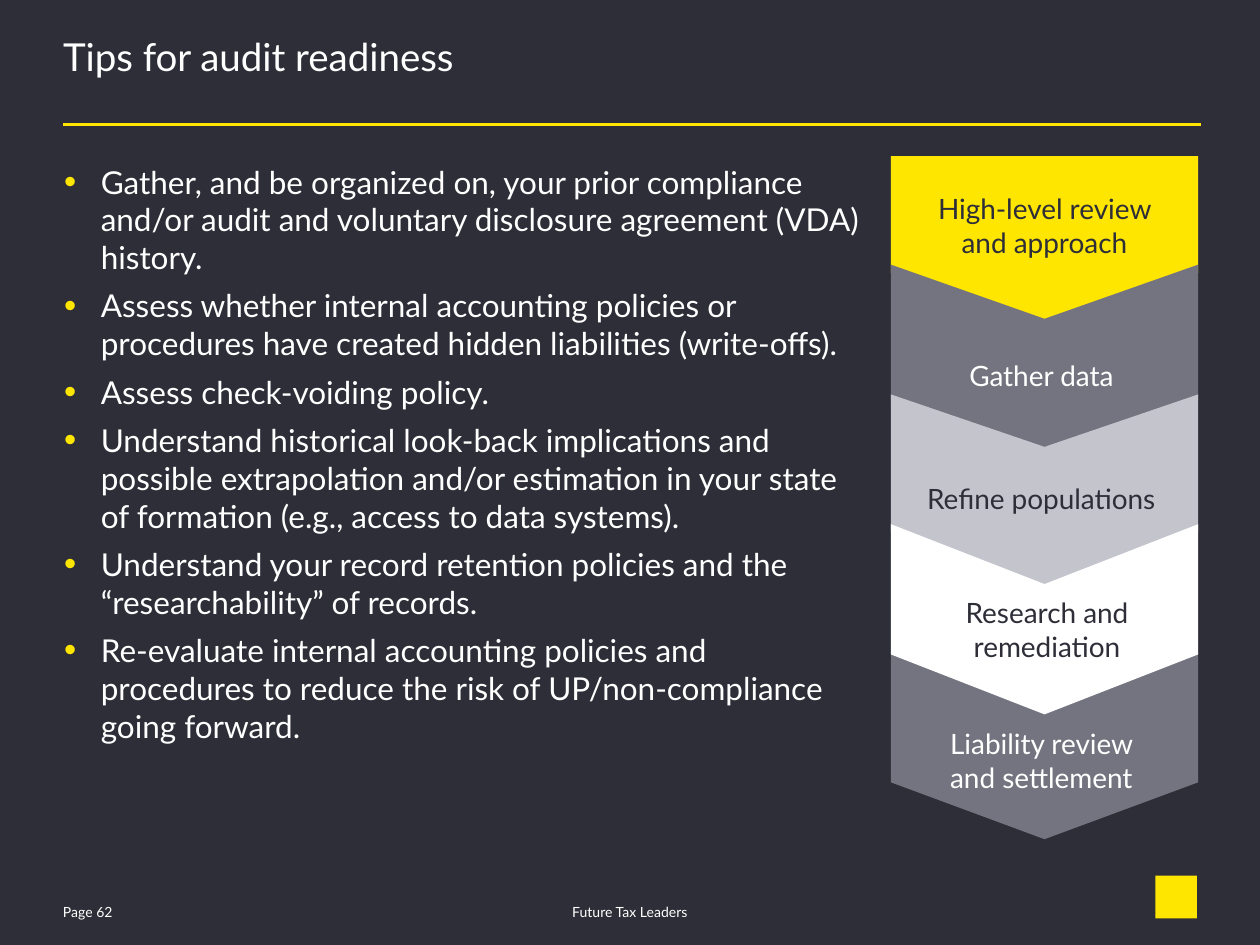
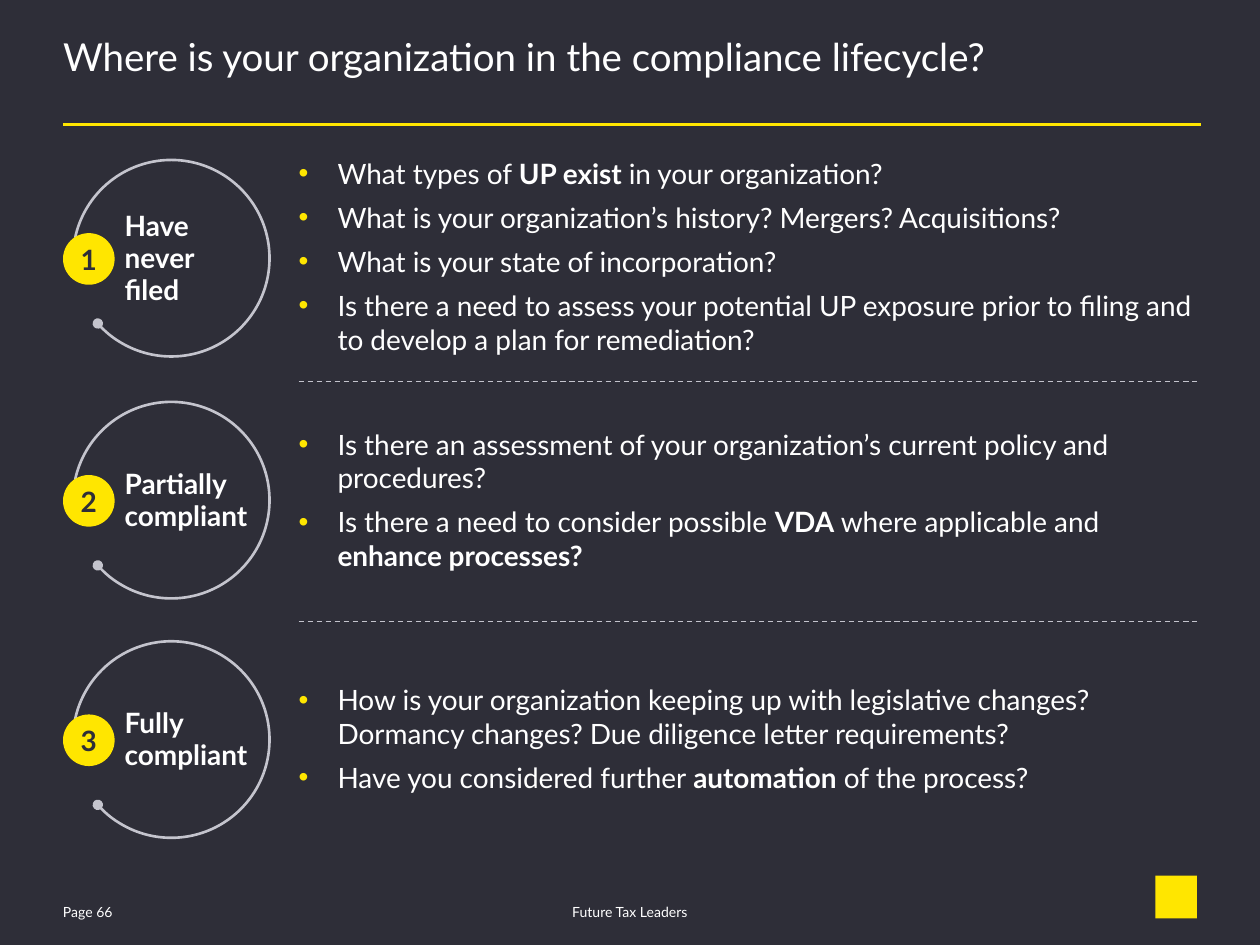
from dataclasses import dataclass
from typing import Optional

from lxml import etree
from pptx import Presentation
from pptx.dml.color import RGBColor
from pptx.enum.dml import MSO_LINE
from pptx.enum.shapes import MSO_CONNECTOR, MSO_SHAPE
from pptx.enum.text import MSO_ANCHOR, MSO_AUTO_SIZE, PP_ALIGN
from pptx.oxml.ns import qn
from pptx.util import Emu, Pt

EMU_PER_PX = 9144
FONT = "Lato"
COLORS = {
    "ink": "2E2E38",
    "yellow": "FFE600",
    "white": "FFFFFF",
    "gray": "747480",
    "silver": "C4C4CD",
}
LEFT, CENTER = PP_ALIGN.LEFT, PP_ALIGN.CENTER
TOP, MIDDLE = MSO_ANCHOR.TOP, MSO_ANCHOR.MIDDLE
NO_FIT = MSO_AUTO_SIZE.NONE
STRAIGHT = MSO_CONNECTOR.STRAIGHT
DASH = MSO_LINE.DASH
CHEVRON, PENTAGON = MSO_SHAPE.CHEVRON, MSO_SHAPE.PENTAGON
OVAL, ARC, RECTANGLE = MSO_SHAPE.OVAL, MSO_SHAPE.ARC, MSO_SHAPE.RECTANGLE

TITLE_ONLY, TITLE_AND_BODY = 5, 1
ARROW_LEFT, ARROW_WIDTH = 707, 244
LIST_LEFT, LIST_WIDTH = 237, 713
ARC_SIZE, BADGE_SIZE = 156, 41
ARC_START, ARC_END = 115.154, 83.031


@dataclass(frozen=True)
class Area:
    left: float
    top: float
    width: float
    height: float

    def emu(self) -> tuple[Emu, Emu, Emu, Emu]:
        return px(self.left), px(self.top), px(self.width), px(self.height)


@dataclass(frozen=True)
class TextStyle:
    size: int
    color: str = "white"
    bold: bool = False
    align: PP_ALIGN = LEFT
    anchor: MSO_ANCHOR = TOP
    top_inset: int = 0
    line_spacing: float = 1.0
    space_after: int = 0
    indent: int = 0
    bullet_percent: int = 100


@dataclass(frozen=True)
class Step:
    label: str
    label_area: Area
    top: int
    length: int
    bend: float
    fill: str
    ink: str


@dataclass(frozen=True)
class Stage:
    label: str
    top: int
    list_top: int
    list_height: int
    questions: tuple[str, ...]


TITLE = TextStyle(22, line_spacing=0.85)
FOOTER = TextStyle(8, top_inset=4)
FOOTER_CENTER = TextStyle(8, top_inset=4, align=CENTER)
TIP = TextStyle(18, space_after=6, indent=29, bullet_percent=110)
QUESTION = TextStyle(16, space_after=6, indent=31)
STAGE_LABEL = TextStyle(16, bold=True, anchor=MIDDLE, line_spacing=0.95, space_after=6)
BADGE = TextStyle(16, color="ink", bold=True, align=CENTER, anchor=MIDDLE)

TIPS = (
    "Gather, and be organized on, your prior compliance and/or audit and voluntary disclosure agreement (VDA) history.",
    "Assess whether internal accounting policies or procedures have created hidden liabilities (write-offs).",
    "Assess check-voiding policy.",
    "Understand historical look-back implications and possible extrapolation and/or estimation in your state of formation (e.g., access to data systems).",
    "Understand your record retention policies and the “researchability” of records.",
    "Re-evaluate internal accounting policies and procedures to reduce the risk of UP/non-compliance going forward.",
)
STEPS = (
    Step("High-level review and approach", Area(727, 149, 204, 57), 124, 133, 0.303, "yellow", "ink"),
    Step("Gather data", Area(739, 280, 175, 32), 210, 151, 0.285, "gray", "white"),
    Step("Refine populations", Area(705, 379, 243, 30), 313, 151, 0.276, "silver", "ink"),
    Step("Research and remediation", Area(730, 468, 202, 60), 416, 151, 0.315, "white", "ink"),
    Step("Liability review and settlement", Area(739, 572, 175, 60), 517, 149, 0.303, "gray", "white"),
)
STAGES = (
    Stage("Have\nnever\nfiled", 127, 124, 161, (
        "What types of *UP exist *in your organization?",
        "What is your organization’s history? Mergers? Acquisitions?",
        "What is your state of incorporation?",
        "Is there a need to assess your potential UP exposure prior to filing and to develop a plan for remediation?",
    )),
    Stage("Partially compliant", 319, 339, 128, (
        "Is there an assessment of your organization’s current policy and procedures?",
        "Is there a need to consider possible *VDA* where applicable and *enhance processes?*",
    )),
    Stage("Fully\ncompliant", 509, 542, 90, (
        "How is your organization keeping up with legislative changes? Dormancy changes? Due diligence letter requirements?",
        "Have you considered further *automation* of the process?",
    )),
)
DIVIDER_TOPS = (303, 493)


def px(value: float) -> Emu:
    return Emu(round(value * EMU_PER_PX))


def rgb(name: str) -> RGBColor:
    return RGBColor.from_string(COLORS[name])


def add_bullet(para, style: TextStyle) -> None:
    props = para._p.get_or_add_pPr()
    props.set("marL", str(px(style.indent)))
    props.set("indent", str(-px(style.indent)))
    color = etree.SubElement(props, qn("a:buClr"))
    etree.SubElement(color, qn("a:srgbClr")).set("val", COLORS["yellow"])
    etree.SubElement(props, qn("a:buSzPct")).set("val", str(style.bullet_percent * 1000))
    etree.SubElement(props, qn("a:buFont")).set("typeface", "Arial")
    etree.SubElement(props, qn("a:buChar")).set("char", "•")


def write_para(para, text: str, style: TextStyle) -> None:
    para.alignment = style.align
    para.line_spacing = style.line_spacing
    para.space_before = Pt(0)
    para.space_after = Pt(style.space_after)
    if style.indent:
        add_bullet(para, style)
    if "*" in text:
        for index, part in enumerate(text.split("*")):
            if part:
                span = para.add_run()
                span.text = part
                span.font.bold = index % 2 == 1
    else:
        para.text = text
    for span in para.runs:
        span.font.name = FONT
        span.font.size = Pt(style.size)
        span.font.color.rgb = rgb(style.color)
        if style.bold:
            span.font.bold = True


def write(box, style: TextStyle, *texts: str) -> None:
    frame = box.text_frame
    frame.auto_size = NO_FIT
    frame.word_wrap = True
    frame.vertical_anchor = style.anchor
    frame.margin_left = frame.margin_right = frame.margin_bottom = 0
    frame.margin_top = px(style.top_inset)
    for index, text in enumerate(texts):
        para = frame.add_paragraph() if index else frame.paragraphs[0]
        write_para(para, text, style)


def add_text(shapes, area: Area, style: TextStyle, *texts: str) -> None:
    write(shapes.add_textbox(*area.emu()), style, *texts)


def fill_placeholder(box, area: Area, style: TextStyle, *texts: str) -> None:
    box.left, box.top, box.width, box.height = area.emu()
    write(box, style, *texts)


def add_solid(shapes, kind: MSO_SHAPE, area: Area, fill: str):
    shape = shapes.add_shape(kind, *area.emu())
    shape.shadow.inherit = False
    shape.fill.solid()
    shape.fill.fore_color.rgb = rgb(fill)
    shape.line.fill.background()
    return shape


def add_rule(page, left: int, right: int, top: int, color: str, weight: float,
             dash: Optional[MSO_LINE] = None) -> None:
    rule = page.shapes.add_connector(STRAIGHT, px(left), px(top), px(right), px(top))
    rule.line.color.rgb = rgb(color)
    rule.line.width = Pt(weight)
    if dash is not None:
        rule.line.dash_style = dash
    etree.SubElement(rule._element.spPr, qn("a:effectLst"))


def add_page(deck, layout: int, title: str, number: int):
    page = deck.slides.add_slide(deck.slide_layouts[layout])
    add_text(page.shapes, Area(50, 713, 73, 20), FOOTER, f"Page {number}")
    add_text(page.shapes, Area(308, 713, 384, 20), FOOTER_CENTER, "Future Tax Leaders")
    add_solid(page.shapes, RECTANGLE, Area(917, 695, 33, 34), "yellow")
    add_rule(page, 50, 953, 99, "yellow", 1.5)
    fill_placeholder(page.shapes.title, Area(50, 32, 900, 65), TITLE, title)
    return page


def add_step_arrow(page, step: Step, kind: MSO_SHAPE) -> None:
    shift = (ARROW_WIDTH - step.length) / 2
    area = Area(ARROW_LEFT + shift, step.top - shift, step.length, ARROW_WIDTH)
    arrow = add_solid(page.shapes, kind, area, step.fill)
    arrow.rotation = 90
    arrow.adjustments[0] = step.bend


def add_stage(page, number: int, stage: Stage) -> None:
    shapes = page.shapes.add_group_shape().shapes
    add_text(shapes, Area(99, stage.top + 54, 110, 49), STAGE_LABEL, stage.label)
    ring = shapes.add_shape(ARC, *Area(58, stage.top, ARC_SIZE, ARC_SIZE).emu())
    ring.shadow.inherit = False
    ring.fill.background()
    ring.adjustments[0] = ARC_START
    ring.adjustments[1] = ARC_END
    ring.line.color.rgb = rgb("silver")
    ring.line.width = Pt(1.5)
    etree.SubElement(ring.line._get_or_add_ln(), qn("a:tailEnd")).set("type", "oval")
    badge_area = Area(50, stage.top + 58, BADGE_SIZE, BADGE_SIZE)
    write(add_solid(shapes, OVAL, badge_area, "yellow"), BADGE, str(number))
    list_area = Area(LIST_LEFT, stage.list_top, LIST_WIDTH, stage.list_height)
    add_text(page.shapes, list_area, QUESTION, *stage.questions)


def build_readiness(deck) -> None:
    page = add_page(deck, TITLE_AND_BODY, "Tips for audit readiness", 62)
    fill_placeholder(page.placeholders[1], Area(51, 129, 635, 541), TIP, *TIPS)
    first, *middle, last = STEPS
    add_step_arrow(page, last, CHEVRON)
    add_step_arrow(page, first, PENTAGON)
    for step in middle:
        add_step_arrow(page, step, CHEVRON)
    for step in STEPS:
        style = TextStyle(16, color=step.ink, align=CENTER, anchor=MIDDLE, top_inset=3)
        add_text(page.shapes, step.label_area, style, step.label)


def build_lifecycle(deck) -> None:
    page = add_page(deck, TITLE_ONLY, "Where is your organization in the compliance lifecycle?", 66)
    for number, stage in enumerate(STAGES, start=1):
        add_stage(page, number, stage)
    for top in DIVIDER_TOPS:
        add_rule(page, LIST_LEFT, LIST_LEFT + LIST_WIDTH, top, "silver", 0.75, DASH)


def main() -> None:
    deck = Presentation()
    deck.slide_width, deck.slide_height = px(1000), px(750)
    background = deck.slide_master.background.fill
    background.solid()
    background.fore_color.rgb = rgb("ink")
    build_readiness(deck)
    build_lifecycle(deck)
    deck.save("out.pptx")


if __name__ == "__main__":
    main()
